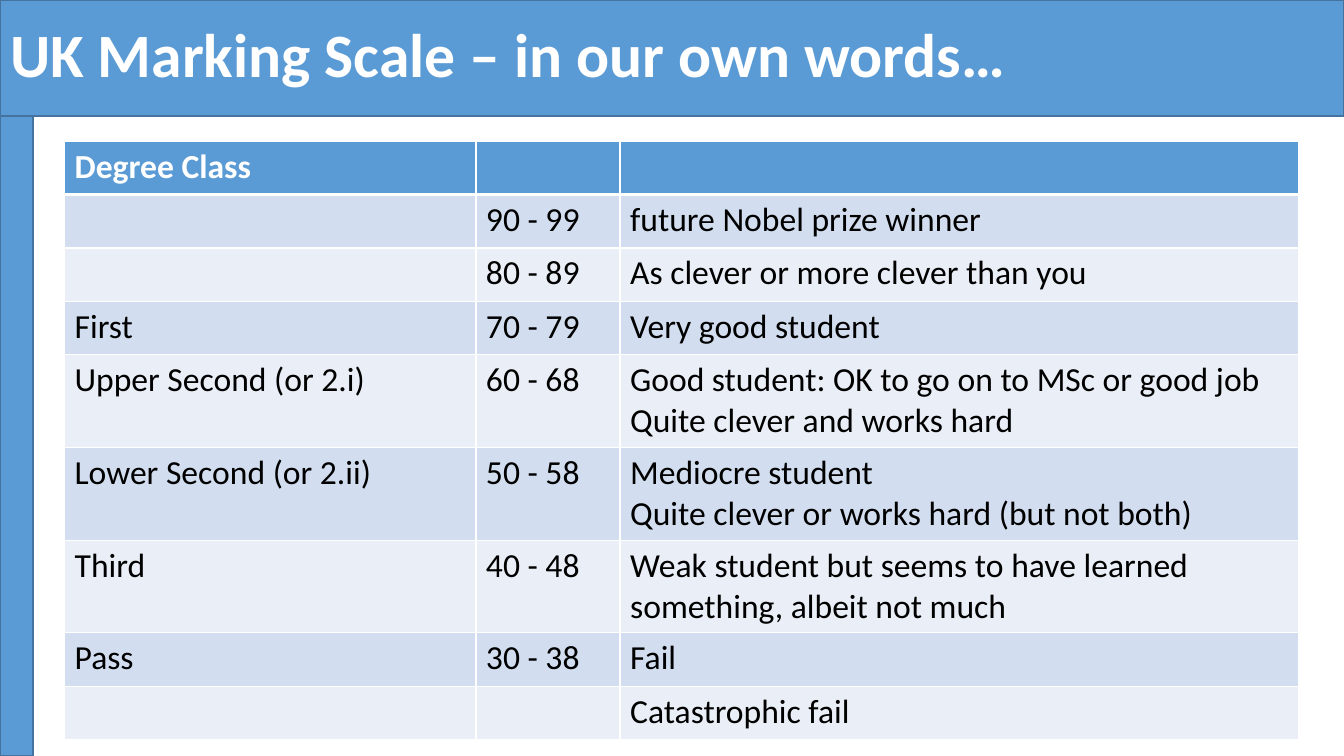
from pptx import Presentation
from pptx.dml.color import RGBColor
from pptx.enum.shapes import MSO_SHAPE
from pptx.enum.text import MSO_ANCHOR, PP_ALIGN
from pptx.oxml import parse_xml
from pptx.oxml.ns import nsdecls
from pptx.util import Inches, Pt

COLORS = {"blue": "5B9BD5", "edge": "43739E", "white": "FFFFFF",
          "black": "000000", "dark": "D2DEEF", "light": "EAEFF7"}
WIDTHS = [4.08, 1.43, 6.73]
LOW, HIGH = 0.53, 0.92
HEIGHTS = [LOW] * 4 + [HIGH] * 3 + [LOW] * 2
MARKS = [
    ("Degree Class", "", ""),
    ("", "90 - 99", "future Nobel prize winner"),
    ("", "80 - 89", "As clever or more clever than you"),
    ("First", "70 - 79", "Very good student"),
    ("Upper Second (or 2.i)", "60 - 68",
     "Good student: OK to go on to MSc or good job\nQuite clever and works hard"),
    ("Lower Second (or 2.ii)", "50 - 58",
     "Mediocre student\nQuite clever or works hard (but not both)"),
    ("Third", "40 - 48",
     "Weak student but seems to have learned something, albeit not much"),
    ("Pass", "30 - 38", "Fail"),
    ("", "", "Catastrophic fail"),
]


def color(name):
    """Return the named colour."""
    return RGBColor.from_string(COLORS[name])


def write(frame, text, size=24, tint="black", bold=False, space=1.0):
    """Fill a text frame with formatted paragraphs."""
    frame.text = text
    for para in frame.paragraphs:
        para.alignment = PP_ALIGN.LEFT
        para.line_spacing = space
        font = para.font
        font.name, font.size, font.bold = "Calibri", Pt(size), bold
        font.color.rgb = color(tint)


class Deck:
    """Holds the style and the current slide."""

    def __init__(self):
        """Start a wide deck with one title slide."""
        self.show = Presentation()
        self.show.slide_width = Inches(13.33)
        self.show.slide_height = Inches(7.5)
        self.slide = self.show.slides.add_slide(self.show.slide_layouts[5])

    def bar(self, *box):
        """Draw a blue bar."""
        shape = self.slide.shapes.add_shape(
            MSO_SHAPE.RECTANGLE, *map(Inches, box))
        shape.shadow.inherit = False
        shape.fill.solid()
        shape.fill.fore_color.rgb = color("blue")
        shape.line.color.rgb = color("edge")
        shape.line.width = Pt(1)

    def title(self, text, *box):
        """Place the title in front of the bars."""
        title = self.slide.shapes.title
        title.left, title.top, title.width, title.height = map(Inches, box)
        title.element.getparent().append(title.element)
        write(title.text_frame, text, size=44, tint="white", bold=True, space=0.9)
        title.text_frame.vertical_anchor = MSO_ANCHOR.MIDDLE
        title.text_frame.word_wrap = True

    def border(self, cell, row):
        """Rule a cell in white, with a thick line under the header."""
        thick = {0: "B", 1: "T"}.get(row)
        for side in "LRTB":
            width = Pt(3 if side == thick else 1)
            cell.get_or_add_tcPr().append(parse_xml(
                f'<a:ln{side} {nsdecls("a")} w="{width}"><a:solidFill>'
                f'<a:srgbClr val="{COLORS["white"]}"/></a:solidFill></a:ln{side}>'))

    def table(self, rows, left, top):
        """Add the banded table of marks."""
        grid = self.slide.shapes.add_table(
            len(rows), len(WIDTHS), Inches(left), Inches(top),
            Inches(sum(WIDTHS)), Inches(sum(HEIGHTS))).table
        for col, width in zip(grid.columns, WIDTHS):
            col.width = Inches(width)
        for r, (texts, height) in enumerate(zip(rows, HEIGHTS)):
            grid.rows[r].height = Inches(height)
            head = r == 0
            fill = "blue" if head else "dark" if r % 2 else "light"
            for c, text in enumerate(texts):
                cell = grid.cell(r, c)
                write(cell.text_frame, text, bold=head,
                      tint="white" if head else "black")
                self.border(cell._tc, r)
                cell.fill.solid()
                cell.fill.fore_color.rgb = color(fill)


def main():
    """Build and save the slide."""
    deck = Deck()
    deck.bar(0, 0, 0.33, 7.5)
    deck.table(MARKS, 0.64, 1.4)
    deck.bar(0, 0, 13.33, 1.15)
    deck.title("UK Marking Scale – in our own words…", 0, 0, 13.33, 1.15)
    deck.show.save("out.pptx")


if __name__ == "__main__":
    main()
